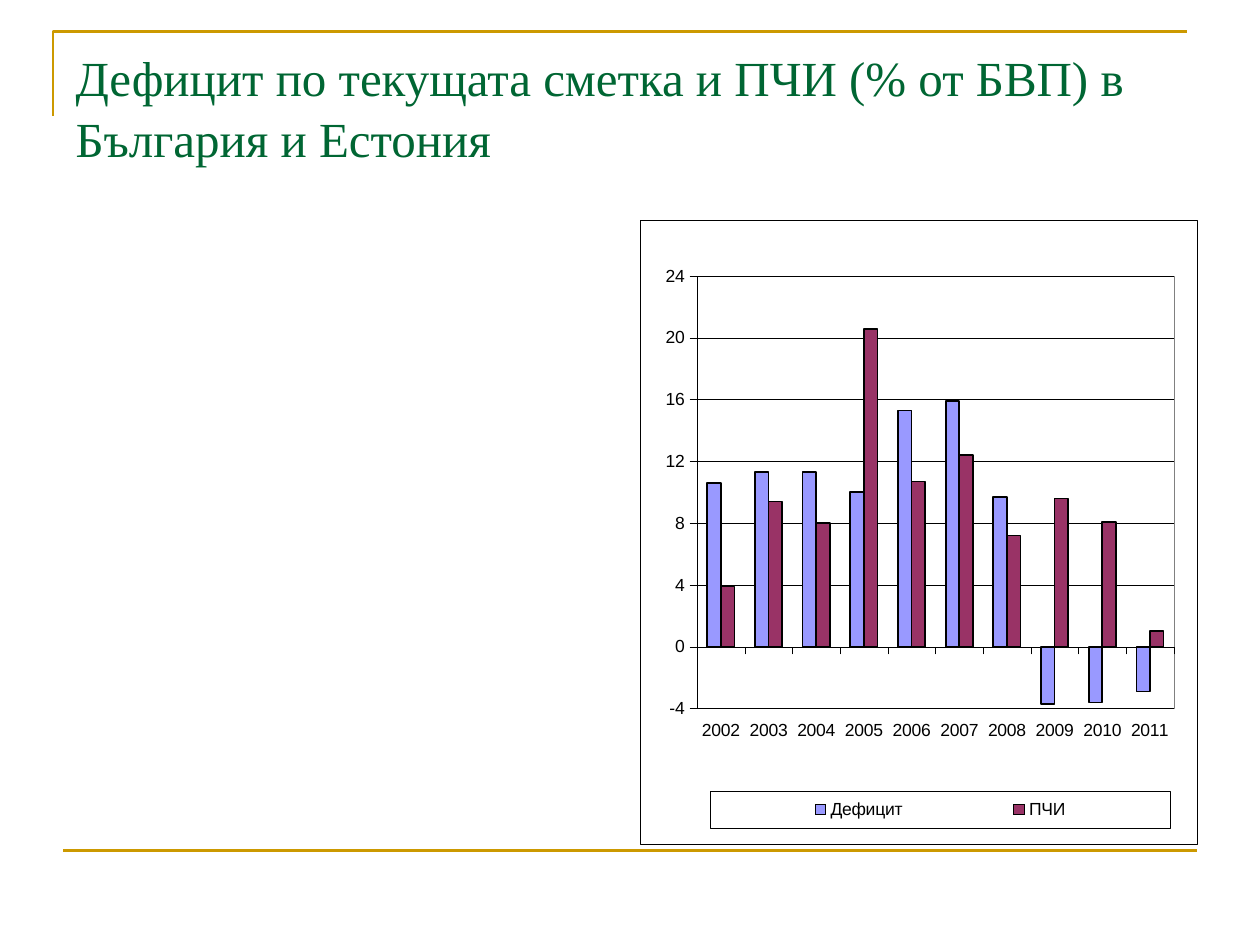
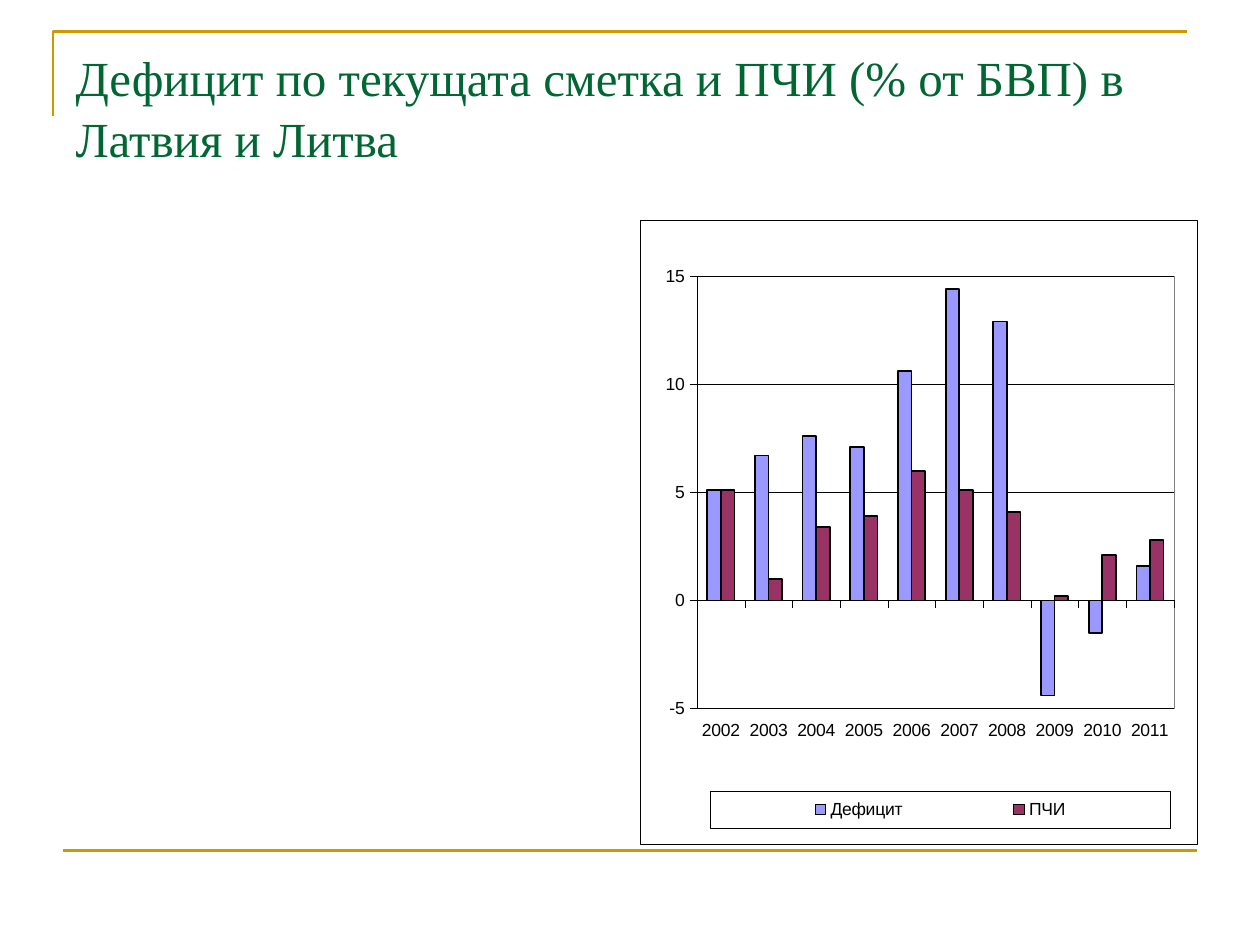
from pptx import Presentation
from pptx.chart.data import CategoryChartData
from pptx.dml.color import RGBColor
from pptx.enum.chart import XL_CHART_TYPE, XL_LEGEND_POSITION, XL_TICK_LABEL_POSITION, XL_TICK_MARK
from pptx.enum.text import MSO_ANCHOR, MSO_AUTO_SIZE, PP_ALIGN
from pptx.oxml import parse_xml
from pptx.oxml.ns import nsdecls, qn
from pptx.util import Inches, Pt

CLUSTERED = XL_CHART_TYPE.COLUMN_CLUSTERED
BOTTOM = XL_LEGEND_POSITION.BOTTOM
LOW = XL_TICK_LABEL_POSITION.LOW
OUTSIDE, NO_TICK = XL_TICK_MARK.OUTSIDE, XL_TICK_MARK.NONE
TOP, LEFT, NO_FIT = MSO_ANCHOR.TOP, PP_ALIGN.LEFT, MSO_AUTO_SIZE.NONE

W, H = 10, 7.5
COLORS = {"gold": "CC9900", "green": "006633", "black": "000000", "white": "FFFFFF",
          "gray": "808080", "deficit": "9999FF", "fdi": "993366"}
HAIRLINE = 0.25
PLOT_BOX = (0.102, 0.089, 0.857, 0.694)
LEGEND_BOX = (0.125, 0.915, 0.828, 0.06)
YEARS = [str(year) for year in range(2002, 2012)]
SERIES = (("Дефицит", "deficit"), ("ПЧИ", "fdi"))
TITLE = "Дефицит по текущата сметка и ПЧИ (% от БВП) в {}"
SLIDES = [
    ("България и Естония", (-4, 24, 4),
     [(10.6, 11.3, 11.3, 10, 15.3, 15.9, 9.7, -3.7, -3.6, -2.9),
      (3.9, 9.4, 8, 20.6, 10.7, 12.4, 7.2, 9.6, 8.1, 1)]),
    ("Латвия и Литва", (-5, 15, 5),
     [(5.1, 6.7, 7.6, 7.1, 10.6, 14.4, 12.9, -4.4, -1.5, 1.6),
      (5.1, 1, 3.4, 3.9, 6, 5.1, 4.1, 0.2, 2.1, 2.8)]),
]


def rgb(name):
    return RGBColor.from_string(COLORS[name])


def set_line(line, color, width):
    line.color.rgb = rgb(color)
    line.width = Pt(width)


def set_font(font, name, size, color):
    font.name, font.size, font.bold = name, Pt(size), False
    font.color.rgb = rgb(color)


def write(tf, text, font="Times New Roman", size=28, color="green", spacing=1.0):
    p = tf.paragraphs[0]
    p.alignment, p.line_spacing = LEFT, spacing
    r = p.add_run()
    r.text = text
    set_font(r.font, font, size, color)


def add_frame(s):
    left, top = Inches(0.42), Inches(0.25)
    builder = s.shapes.build_freeform(left, top + Inches(0.67))
    builder.add_line_segments([(left, top), (left + Inches(0.9 * W), top)], close=False)
    corner = builder.convert_to_shape()
    corner.shadow.inherit = False
    corner.fill.background()
    set_line(corner.line, "gold", 1.5)
    y = Inches(0.9 * H)
    rule = s.shapes.add_connector(1, Inches(0.05 * W), y, Inches(0.95 * W), y)
    set_line(rule.line, "gold", 1.5)
    rule._element.spPr.append(parse_xml(f"<a:effectLst {nsdecls('a')}/>"))


def add_title(s, text):
    sp = s.shapes.title
    sp.left, sp.top = Inches(0.05 * W), Inches(0.04 * H)
    sp.width, sp.height = Inches(0.9 * W), Inches(1.25)
    tf = sp.text_frame
    tf.word_wrap, tf.auto_size, tf.vertical_anchor = True, NO_FIT, TOP
    write(tf, text, spacing=1.05)


def box_style(line, fill=None):
    paint = (f'<a:solidFill><a:srgbClr val="{COLORS[fill]}"/></a:solidFill>'
             if fill else "<a:noFill/>")
    return parse_xml(
        f'<c:spPr {nsdecls("c", "a")}>{paint}<a:ln w="{Pt(HAIRLINE)}"><a:solidFill>'
        f'<a:srgbClr val="{COLORS[line]}"/></a:solidFill></a:ln></c:spPr>')


def box_layout(box, inner=False):
    target = '<c:layoutTarget val="inner"/>' if inner else ""
    modes = "".join(f'<c:{k}Mode val="edge"/>' for k in "xy")
    sizes = "".join(f'<c:{k} val="{v}"/>' for k, v in zip("xywh", box))
    return parse_xml(f'<c:layout {nsdecls("c")}><c:manualLayout>{target}{modes}{sizes}'
                     '</c:manualLayout></c:layout>')


def drop_layout(element):
    for old in element.findall(qn("c:layout")):
        element.remove(old)


def style_axis(axis):
    axis.major_tick_mark, axis.minor_tick_mark = OUTSIDE, NO_TICK
    set_font(axis.tick_labels.font, "Arial", 10, "black")
    set_line(axis.format.line, "black", HAIRLINE)


def style_value_axis(axis, scale):
    style_axis(axis)
    axis.minimum_scale, axis.maximum_scale, axis.major_unit = scale
    axis.has_major_gridlines = True
    set_line(axis.major_gridlines.format.line, "black", HAIRLINE)
    axis.tick_labels.number_format = "0"
    axis.tick_labels.number_format_is_linked = False


def style_legend(chart):
    chart.has_legend = True
    legend = chart.legend
    legend.position, legend.include_in_layout = BOTTOM, False
    set_font(legend.font, "Arial", 10, "black")
    element = legend._element
    drop_layout(element)
    element.find(qn("c:legendPos")).addnext(box_layout(LEGEND_BOX))
    element.find(qn("c:overlay")).addnext(box_style("black", "white"))


def style_boxes(chart):
    space = chart._chartSpace
    space.chart.addnext(box_style("black", "white"))
    plot_area = space.chart.plotArea
    drop_layout(plot_area)
    plot_area.insert(0, box_layout(PLOT_BOX, inner=True))
    plot_area.append(box_style("gray"))


def add_columns(s, scale, rows):
    data = CategoryChartData()
    data.categories = YEARS
    for (name, _), values in zip(SERIES, rows):
        data.add_series(name, values)
    chart = s.shapes.add_chart(CLUSTERED, Inches(5.08), Inches(1.75),
                               Inches(4.42), Inches(0.66 * H), data).chart
    chart.has_title = False
    set_font(chart.font, "Arial", 10, "black")
    plot = chart.plots[0]
    plot.vary_by_categories, plot.gap_width, plot.overlap = False, 150, 0
    for series, (_, color) in zip(plot.series, SERIES):
        series.invert_if_negative = False
        series.format.fill.solid()
        series.format.fill.fore_color.rgb = rgb(color)
        set_line(series.format.line, "black", 1)
    style_axis(chart.category_axis)
    chart.category_axis.tick_label_position = LOW
    style_value_axis(chart.value_axis, scale)
    style_legend(chart)
    style_boxes(chart)


def main():
    prs = Presentation()
    prs.slide_width, prs.slide_height = Inches(W), Inches(H)
    for countries, scale, rows in SLIDES:
        s = prs.slides.add_slide(prs.slide_layouts[5])
        add_frame(s)
        add_title(s, TITLE.format(countries))
        add_columns(s, scale, rows)
    prs.save("out.pptx")


if __name__ == "__main__":
    main()
